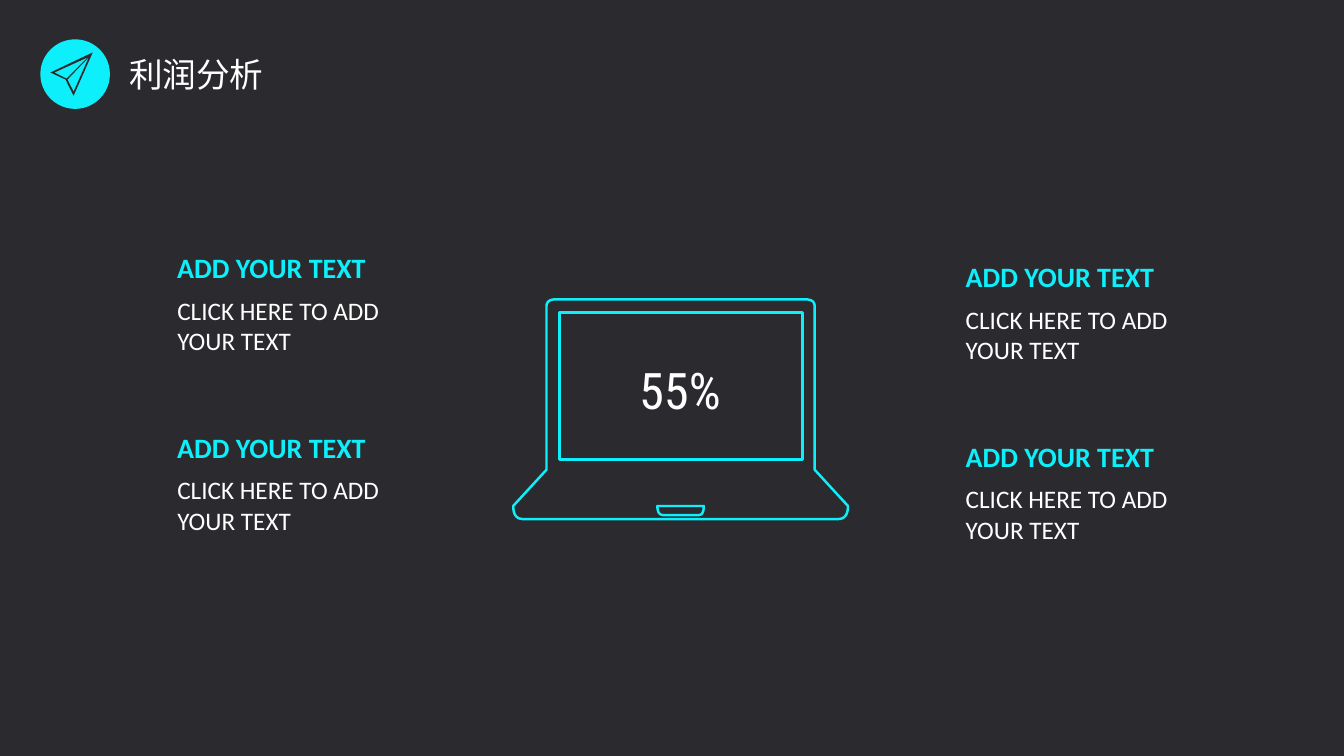
from dataclasses import dataclass
from lxml import etree
from pptx import Presentation
from pptx.dml.color import RGBColor
from pptx.enum.shapes import MSO_SHAPE
from pptx.enum.text import MSO_ANCHOR, MSO_AUTO_SIZE, PP_ALIGN
from pptx.oxml.ns import qn
from pptx.util import Inches, Pt

OVAL = MSO_SHAPE.OVAL
LEFT = PP_ALIGN.LEFT
TOP = MSO_ANCHOR.TOP
GROW = MSO_AUTO_SIZE.SHAPE_TO_FIT_TEXT


@dataclass(frozen=True)
class Theme:
    dark: RGBColor = RGBColor(0x2B, 0x2A, 0x2F)
    accent: RGBColor = RGBColor(0x0D, 0xEF, 0xFA)
    white: RGBColor = RGBColor(0xFF, 0xFF, 0xFF)
    font: str = "Calibri"
    title_font: str = "Noto Sans CJK SC"
    number_font: str = "Roboto Condensed"
    title: int = 24
    heading: int = 20
    body: int = 18
    number: int = 36
    line: float = 1.75


THEME = Theme()


def write(sp, box, text, size, font, color, bold=False):
    sp.left, sp.top, sp.width, sp.height = (Inches(v) for v in box)
    tf = sp.text_frame
    tf.word_wrap = True
    tf.auto_size = GROW
    tf.vertical_anchor = TOP
    p = tf.paragraphs[0]
    p.alignment = LEFT
    r = p.add_run()
    r.text = text
    r.font.size = Pt(size)
    r.font.name = font
    r.font.bold = bold
    r.font.color.rgb = color
    return r


def add_text(s, box, *style):
    return write(s.shapes.add_textbox(0, 0, 0, 0), box, *style)


def curve(start, control, end, steps=8):
    for i in range(1, steps + 1):
        t = i / steps
        yield tuple((1 - t) ** 2 * a + 2 * t * (1 - t) * b + t * t * c
                    for a, b, c in zip(start, control, end))


def flatten(outline):
    points = []
    for *control, end in outline:
        points += curve(points[-1], control[0], end) if control else [end]
    return points


def add_outlines(s, x, y, outlines):
    builder = None
    for outline in outlines:
        points = [(Inches(a), Inches(b)) for a, b in flatten(outline)]
        if builder is None:
            builder = s.shapes.build_freeform(*points[0])
        else:
            builder.move_to(*points[0])
        builder.add_line_segments(points[1:], close=True)
    sp = builder.convert_to_shape(Inches(x), Inches(y))
    sp.shadow.inherit = False
    return sp


def add_header(s, x, y, text):
    badge = s.shapes.add_shape(OVAL, Inches(x), Inches(y), Inches(0.69), Inches(0.69))
    badge.shadow.inherit = False
    badge.fill.solid()
    badge.fill.fore_color.rgb = THEME.accent
    badge.line.fill.background()

    body = [(0.15, 0.27), (0.23, 0.43), (0.42, 0), (0, 0.2)]
    upper_wing = [(0.16, 0.26), (0.04, 0.2), (0.37, 0.05)]
    lower_wing = [(0.23, 0.39), (0.17, 0.27), (0.38, 0.05)]
    plane = add_outlines(s, x + 0.1, y + 0.13,
                         [[(pt,) for pt in part] for part in (body, upper_wing, lower_wing)])
    plane.fill.solid()
    plane.fill.fore_color.rgb = THEME.dark
    plane.line.fill.background()

    r = write(s.shapes.title, (x + 0.78, y + 0.09, 1.94, 0.5), text,
              THEME.title, THEME.title_font, THEME.white)
    etree.SubElement(r.font._element, qn("a:ea")).set("typeface", THEME.title_font)


def add_laptop(s, x, y, value):
    case = [((2.99, 1.69),), ((2.99, 0.07),), ((2.99, 0), (2.9, 0)),
            ((0.42, 0),), ((0.33, 0), (0.33, 0.07)), ((0.33, 1.69),),
            ((0, 2.05),), ((0, 2.18), (0.1, 2.18)),
            ((3.22, 2.18),), ((3.32, 2.18), (3.32, 2.05))]
    latch = [((1.84, 2.14),), ((1.49, 2.14),), ((1.43, 2.14), (1.43, 2.05)),
             ((1.89, 2.05),), ((1.89, 2.14), (1.84, 2.14))]
    screen = [((2.87, 1.59),), ((0.46, 1.59),), ((0.46, 0.13),), ((2.87, 0.13),)]
    laptop = add_outlines(s, x, y, [case, latch, screen])
    laptop.fill.background()
    laptop.line.color.rgb = THEME.accent
    laptop.line.width = Pt(THEME.line)
    add_text(s, (x + 1.15, y + 0.54, 1.22, 0.71), value,
             THEME.number, THEME.number_font, THEME.white)


def add_captions(s, x, y, captions):
    for i, (heading, body) in enumerate(captions):
        top = y + i * 1.78
        add_text(s, (x, top, 2.2, 0.44), heading,
                 THEME.heading, THEME.font, THEME.accent, True)
        add_text(s, (x, top + 0.44, 2.79, 0.71), body,
                 THEME.body, THEME.font, THEME.white)


def main():
    prs = Presentation()
    prs.slide_width, prs.slide_height = Inches(13.33), Inches(7.5)
    s = prs.slides.add_slide(prs.slide_layouts[5])
    s.background.fill.solid()
    s.background.fill.fore_color.rgb = THEME.dark
    captions = [("ADD YOUR TEXT", "CLICK HERE TO ADD YOUR TEXT")] * 2
    add_laptop(s, 5.09, 2.97, "55%")
    add_captions(s, 1.66, 2.44, captions)
    add_captions(s, 9.48, 2.53, captions)
    add_header(s, 0.4, 0.39, "利润分析")
    prs.save("out.pptx")


if __name__ == "__main__":
    main()
